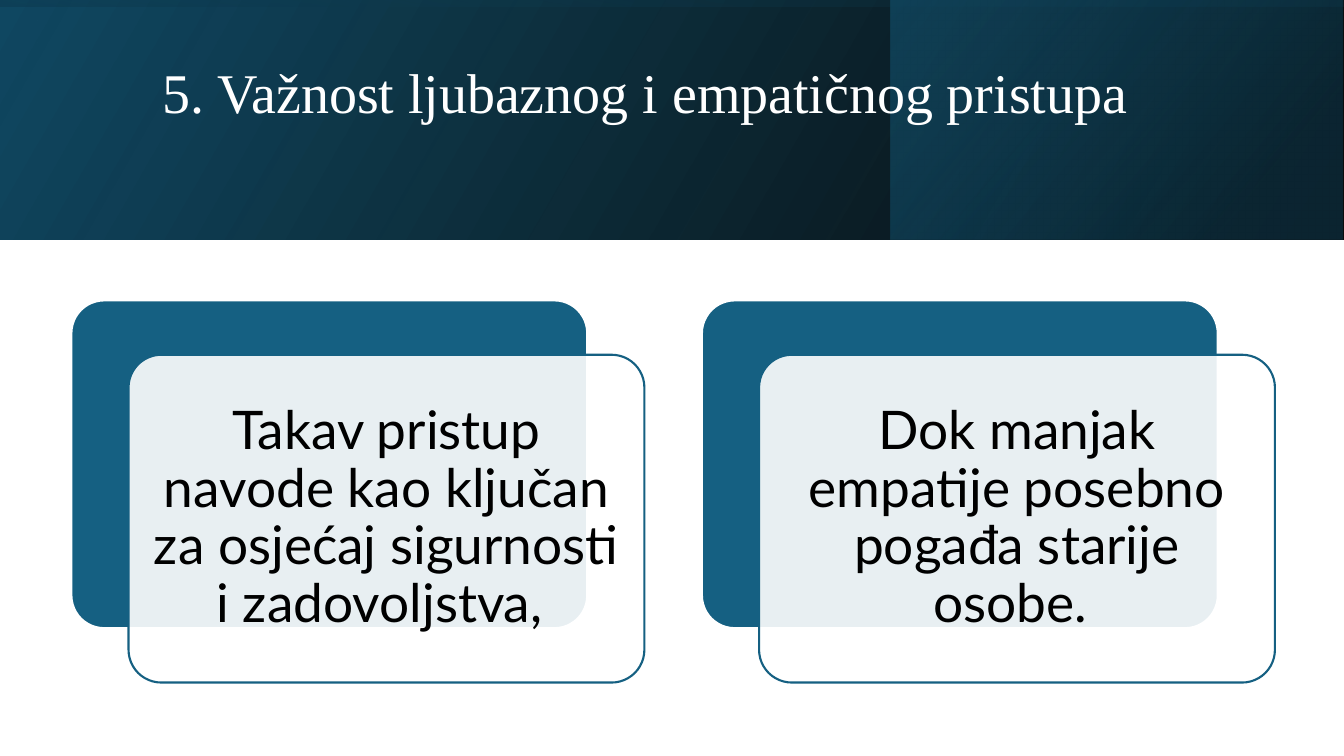
from pptx import Presentation
from pptx import util as u
from pptx.dml.color import RGBColor
from pptx.enum import shapes, text
from pptx.oxml.ns import qn
from lxml import etree

SLIDE_WIDTH, SLIDE_HEIGHT = u.Cm(33.87), u.Cm(19.05)
BANNER_HEIGHT = u.Cm(6.03)
WHITE, BLACK, BLUE, DEEP_BLUE, NAVY = "FFFFFF", "000000", "156082", "104862", "0B3041"
CARD_TEXTS = [
    "Takav pristup navode kao ključan za osjećaj sigurnosti i zadovoljstva, ",
    "Dok manjak empatije posebno pogađa starije osobe. ",
]


def paint(color_format, color):
    """Give a colour format a hex colour."""
    color_format.rgb = RGBColor.from_string(color)


def set_alpha(fill_element, percent):
    """Set the opacity of the colour inside a fill or gradient stop."""
    color = fill_element.find(qn("a:srgbClr"))
    etree.SubElement(color, qn("a:alpha"), val=str(percent * 1000))


def format_paragraph(paragraph, font_name, size, color, alignment):
    """Format a paragraph and its runs."""
    paragraph.alignment = alignment
    paragraph.line_spacing = 0.9
    for run in paragraph.runs:
        run.font.name = font_name
        run.font.size = u.Pt(size)
        paint(run.font.color, color)


def set_margins(frame, margin):
    """Use one margin on all sides of a text frame."""
    frame.margin_left = frame.margin_right = margin
    frame.margin_top = frame.margin_bottom = margin


def add_gradient_band(slide, layer, box, stops, angle, rotation=0):
    """Add a mirrored translucent gradient rectangle behind the title."""
    band = slide.shapes.add_shape(shapes.MSO_SHAPE.RECTANGLE, *box)
    band.shadow.inherit = False
    band.line.fill.background()
    band.rotation = rotation
    band._element.spPr.xfrm.set("flipH", "1")
    band.fill.gradient()
    band.fill.gradient_angle = 360 - angle
    for stop, (position, color, _) in zip(band.fill.gradient_stops, stops):
        stop.position = position
        paint(stop.color, color)
    stop_elements = band._element.spPr.iter(qn("a:gs"))
    for element, (_, _, alpha) in zip(stop_elements, stops):
        set_alpha(element, alpha)
    slide.shapes._spTree.insert(2 + layer, band._element)


def add_banner(slide):
    """Add the three layered gradients of the banner."""
    full = (0, 0, SLIDE_WIDTH, BANNER_HEIGHT)
    right = (u.Cm(22.45), 0, u.Cm(11.38), BANNER_HEIGHT)
    shift = (SLIDE_WIDTH - BANNER_HEIGHT) // 2
    upright = (shift, -shift, BANNER_HEIGHT, SLIDE_WIDTH)
    add_gradient_band(slide, 0, full, [(0, BLACK, 96), (1, DEEP_BLUE, 100)], 330)
    add_gradient_band(slide, 1, right, [(0.19, NAVY, 68), (1, BLUE, 48)], 320)
    add_gradient_band(slide, 2, upright, [(0.23, DEEP_BLUE, 16), (0.99, BLACK, 45)], 350, 270)


def format_title(title):
    """Place and format the slide title."""
    title.left, title.top = u.Cm(3.84), u.Cm(0.97)
    title.width, title.height = u.Cm(27), u.Cm(4.37)
    frame = title.text_frame
    frame.text = "5. Važnost ljubaznog i empatičnog pristupa"
    frame.vertical_anchor = text.MSO_ANCHOR.MIDDLE
    frame.margin_left = frame.margin_right = u.Cm(0.25)
    frame.margin_top, frame.margin_bottom = u.Cm(0.13), u.Cm(1.62)
    format_paragraph(frame.paragraphs[0], "Times New Roman", 40, WHITE, text.PP_ALIGN.LEFT)


def add_panel(slide, left, top, fill_color, line_color):
    """Add one rounded panel."""
    panel = slide.shapes.add_shape(
        shapes.MSO_SHAPE.ROUNDED_RECTANGLE, left, top, u.Cm(13), u.Cm(8.26)
    )
    panel.adjustments[0] = 0.1
    panel.shadow.inherit = False
    panel.fill.solid()
    paint(panel.fill.fore_color, fill_color)
    paint(panel.line.color, line_color)
    panel.line.width = u.Pt(1.5)
    return panel


def add_card(slide, left, top, words):
    """Add a blue panel with an offset translucent text panel."""
    add_panel(slide, left, top, BLUE, WHITE)
    front = add_panel(slide, left + u.Cm(1.44), top + u.Cm(1.37), WHITE, BLUE)
    set_alpha(front._element.spPr.find(qn("a:solidFill")), 90)
    frame = front.text_frame
    frame.text = words
    frame.word_wrap = True
    frame.vertical_anchor = text.MSO_ANCHOR.MIDDLE
    set_margins(frame, u.Cm(0.35))
    format_paragraph(frame.paragraphs[0], "Lato", 38, BLACK, text.PP_ALIGN.CENTER)


def main():
    """Build and save the presentation."""
    presentation = Presentation()
    presentation.slide_width, presentation.slide_height = SLIDE_WIDTH, SLIDE_HEIGHT
    slide = presentation.slides.add_slide(presentation.slide_layouts[5])
    format_title(slide.shapes.title)
    add_banner(slide)
    for index, words in enumerate(CARD_TEXTS):
        add_card(slide, u.Cm(1.8 + 15.89 * index), u.Cm(7.57), words)
    presentation.save("out.pptx")


if __name__ == "__main__":
    main()
